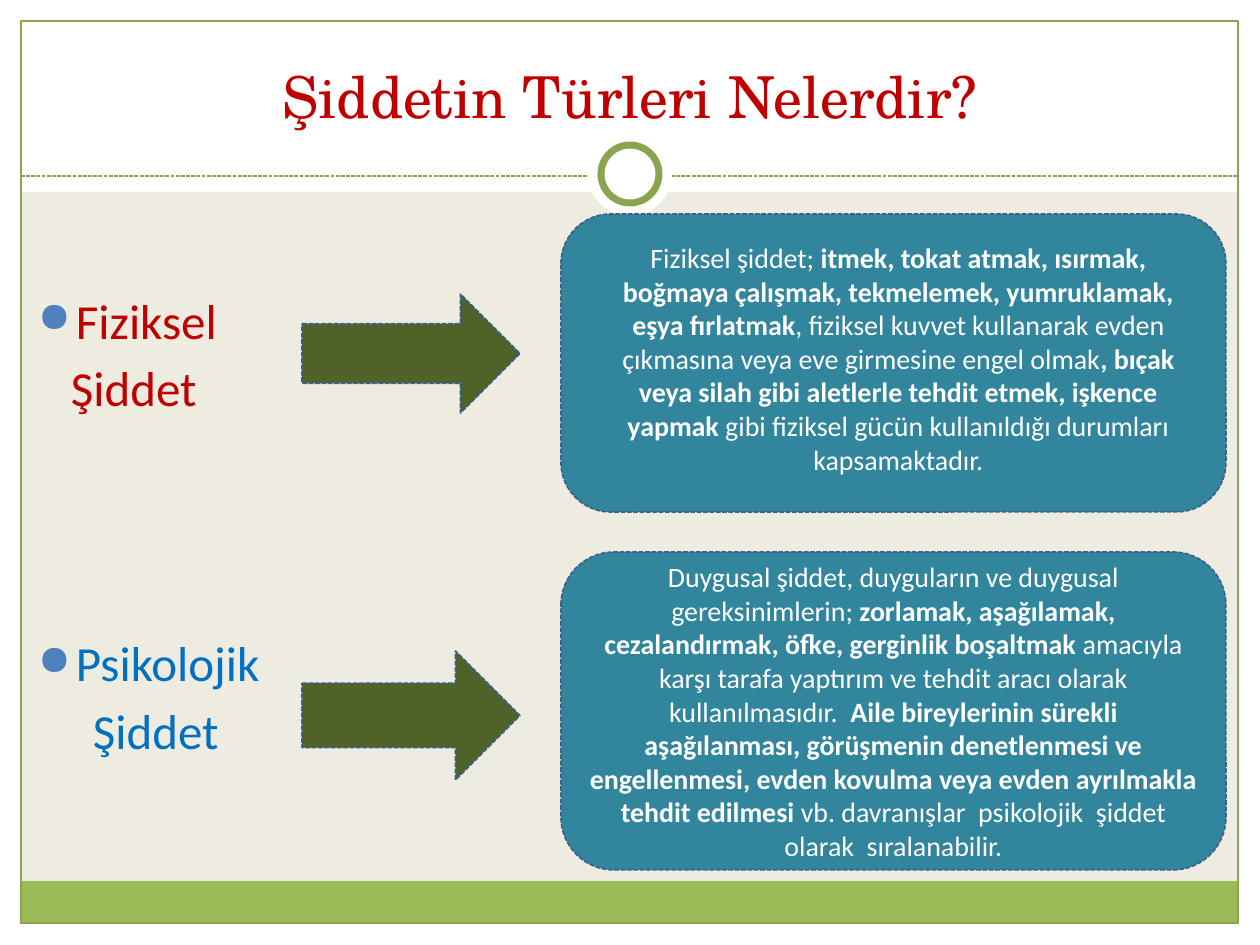
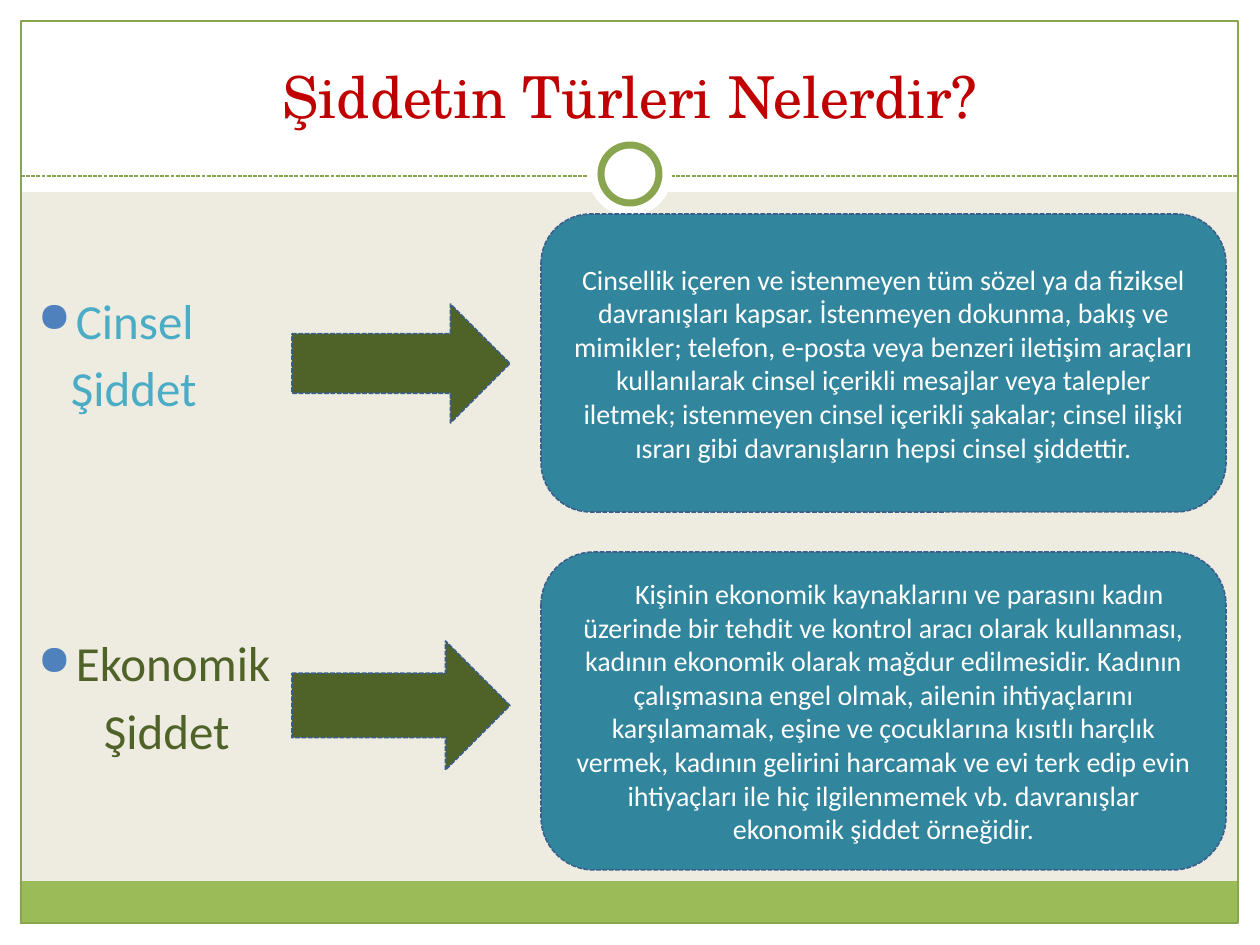
"""Build two slides on the kinds of violence, each pairing labels with explanation cards."""
from lxml import etree
from pptx import Presentation
from pptx import util as u
from pptx.dml.color import RGBColor
from pptx.enum import dml, shapes, text
from pptx.oxml.ns import qn

SCALE = 914400 / 126
HUES = {
    "sand": "EEECE1", "white": "FFFFFF", "green": "9BBB59", "olive": "89A54F",
    "moss": "4F6228", "teal": "31859C", "navy": "3A5F8C", "dot": "4F81BD",
    "red": "C00000", "blue": "0070C0", "aqua": "4BACC6",
}
HUE = {name: RGBColor.from_string(code) for name, code in HUES.items()}
KIND = shapes.MSO_SHAPE
MID, TOP, LOW = text.MSO_ANCHOR.MIDDLE, text.MSO_ANCHOR.TOP, text.MSO_ANCHOR.BOTTOM
LEFT, MITTE = text.PP_ALIGN.LEFT, text.PP_ALIGN.CENTER
DASH = dml.MSO_LINE.SQUARE_DOT
HEAD = {"name": "TeX Gyre Schola", "size": u.Pt(33)}
LABEL = {"name": "Calibri", "size": u.Pt(28)}
NOTE = {"name": "Calibri", "size": u.Pt(16)}


def px(num):
    return u.Emu(round(num * SCALE))


def write(para, words, font, hue, align, **props):
    para.alignment = align
    for name, num in props.items():
        para._p.get_or_add_pPr().set(name, str(px(num)))
    for i, part in enumerate(words.split("*")):
        if part:
            run = para.add_run()
            run.text = part
            run.font.color.rgb = HUE[hue]
            for name, val in {**font, "bold": i % 2 == 1}.items():
                setattr(run.font, name, val)


FRAME = [
    (KIND.RECTANGLE, (0, 924, 1260, 21), "white", None, 0),
    (KIND.RECTANGLE, (0, 0, 1260, 192), "white", None, 0),
    (KIND.RECTANGLE, (0, 0, 21, 945), "white", None, 0),
    (KIND.RECTANGLE, (1239, 0, 21, 945), "white", None, 0),
    (KIND.RECTANGLE, (20, 881, 1218, 43), "green", None, 0),
    (KIND.RECTANGLE, (21, 21, 1217, 902), None, "olive", 0.75),
    (None, (21, 176, 1239, 176), None, "olive", 0.75),
    (KIND.OVAL, (588, 132, 84, 84), "white", None, 0),
    (KIND.OVAL, (601, 145, 58, 58), "white", "olive", 4),
]
ROWS = [
    {"label": 290, "card": 214, "tall": 298, "arrow": 119},
    {"label": 633, "card": 552, "tall": 318, "arrow": 129},
]
INSET = {"margin_left": px(28), "margin_top": px(12), "margin_right": px(18),
         "vertical_anchor": TOP}
PAGES = [
    {"arrow": 302, "card": 561, "wide": 665, "items": [
        {"name": "Fiziksel", "hue": "red", "pad": 33, "arrow": 294, "inset": INSET,
         "note": "Fiziksel şiddet; *itmek, tokat atmak, ısırmak, boğmaya çalışmak, "
                 "tekmelemek, yumruklamak, eşya fırlatmak*, fiziksel kuvvet kullanarak "
                 "evden çıkmasına veya eve girmesine engel olmak*, bıçak veya silah gibi "
                 "aletlerle tehdit etmek, işkence yapmak* gibi fiziksel gücün "
                 "kullanıldığı durumları kapsamaktadır."},
        {"name": "Psikolojik", "hue": "blue", "pad": 55, "arrow": 651,
         "note": "Duygusal şiddet, duyguların ve duygusal gereksinimlerin; *zorlamak, "
                 "aşağılamak, cezalandırmak, öfke, gerginlik boşaltmak* amacıyla karşı "
                 "tarafa yaptırım ve tehdit aracı olarak kullanılmasıdır.*  Aile "
                 "bireylerinin sürekli aşağılanması, görüşmenin denetlenmesi ve "
                 "engellenmesi, evden kovulma veya evden ayrılmakla tehdit edilmesi* vb. "
                 "davranışlar  psikolojik  şiddet olarak  sıralanabilir."},
    ]},
    {"arrow": 292, "card": 541, "wide": 685, "items": [
        {"name": "Cinsel", "hue": "aqua", "pad": 33, "arrow": 304,
         "note": "Cinsellik içeren ve istenmeyen tüm sözel ya da fiziksel davranışları "
                 "kapsar. İstenmeyen dokunma, bakış ve mimikler; telefon, e-posta veya "
                 "benzeri iletişim araçları kullanılarak cinsel içerikli mesajlar veya "
                 "talepler iletmek; istenmeyen cinsel içerikli şakalar; cinsel ilişki "
                 "ısrarı gibi davranışların hepsi cinsel şiddettir."},
        {"name": "Ekonomik", "hue": "moss", "pad": 66, "arrow": 641, "indent": 32,
         "note": "Kişinin ekonomik kaynaklarını ve parasını kadın üzerinde bir tehdit "
                 "ve kontrol aracı olarak kullanması, kadının ekonomik olarak mağdur "
                 "edilmesidir. Kadının çalışmasına engel olmak, ailenin ihtiyaçlarını "
                 "karşılamamak, eşine ve çocuklarına kısıtlı harçlık vermek, kadının "
                 "gelirini harcamak ve evi terk edip evin ihtiyaçları ile hiç "
                 "ilgilenmemek vb. davranışlar ekonomik şiddet örneğidir."},
    ]},
]

deck = Presentation()
deck.slide_width, deck.slide_height = px(1260), px(945)

for page in PAGES:
    slide = deck.slides.add_slide(deck.slide_layouts[6])
    slide.background.fill.solid()
    slide.background.fill.fore_color.rgb = HUE["sand"]

    parts = list(FRAME)
    for row, item in zip(ROWS, page["items"]):
        parts.append((KIND.RIGHT_ARROW, (page["arrow"], item["arrow"], 218, row["arrow"]),
                      "moss", "navy", 0.9))
    for row in ROWS:
        parts.append((KIND.ROUNDED_RECTANGLE,
                      (page["card"], row["card"], page["wide"], row["tall"]),
                      "teal", "navy", 0.9))

    cards = []
    for kind, box, fill, edge, width in parts:
        spot = [px(num) for num in box]
        if kind is None:
            form = slide.shapes.add_connector(shapes.MSO_CONNECTOR.STRAIGHT, *spot)
            etree.SubElement(form._element.spPr, qn("a:effectLst"))
        else:
            form = slide.shapes.add_shape(kind, *spot)
            form.shadow.inherit = False
            if fill:
                form.fill.solid()
                form.fill.fore_color.rgb = HUE[fill]
            else:
                form.fill.background()
        if edge:
            form.line.color.rgb = HUE[edge]
            form.line.width = u.Pt(width)
            if kind is None or edge == "navy":
                form.line.dash_style = DASH
        else:
            form.line.fill.background()
        if kind == KIND.ROUNDED_RECTANGLE:
            cards.append(form)

    title = slide.shapes.add_textbox(px(42), px(31), px(1176), px(105)).text_frame
    title.word_wrap, title.vertical_anchor = True, LOW
    write(title.paragraphs[0], "Şiddetin Türleri Nelerdir?", HEAD, "red", MITTE)

    for row, item, card in zip(ROWS, page["items"], cards):
        label = slide.shapes.add_textbox(px(38), px(row["label"]), px(250), px(130)).text_frame
        label.word_wrap = True
        for side in ("left", "top", "right", "bottom"):
            setattr(label, "margin_" + side, 0)
        first, second = label.paragraphs[0], label.add_paragraph()
        write(first, item["name"], LABEL, item["hue"], LEFT, marL=38, indent=-38)
        props = first._p.get_or_add_pPr()
        tint = etree.SubElement(props, qn("a:buClr"))
        etree.SubElement(tint, qn("a:srgbClr"), val=HUES["dot"])
        etree.SubElement(props, qn("a:buSzPct"), val="85000")
        etree.SubElement(props, qn("a:buChar"), char="●")
        write(second, "Şiddet", LABEL, item["hue"], LEFT, marL=item["pad"], indent=0)
        second.space_before = u.Pt(5)

        body = card.text_frame
        for name, val in {"word_wrap": True, "vertical_anchor": MID,
                          **item.get("inset", {})}.items():
            setattr(body, name, val)
        write(body.paragraphs[0], item["note"], NOTE, "white", MITTE,
              indent=item.get("indent", 0))

deck.save("out.pptx")
